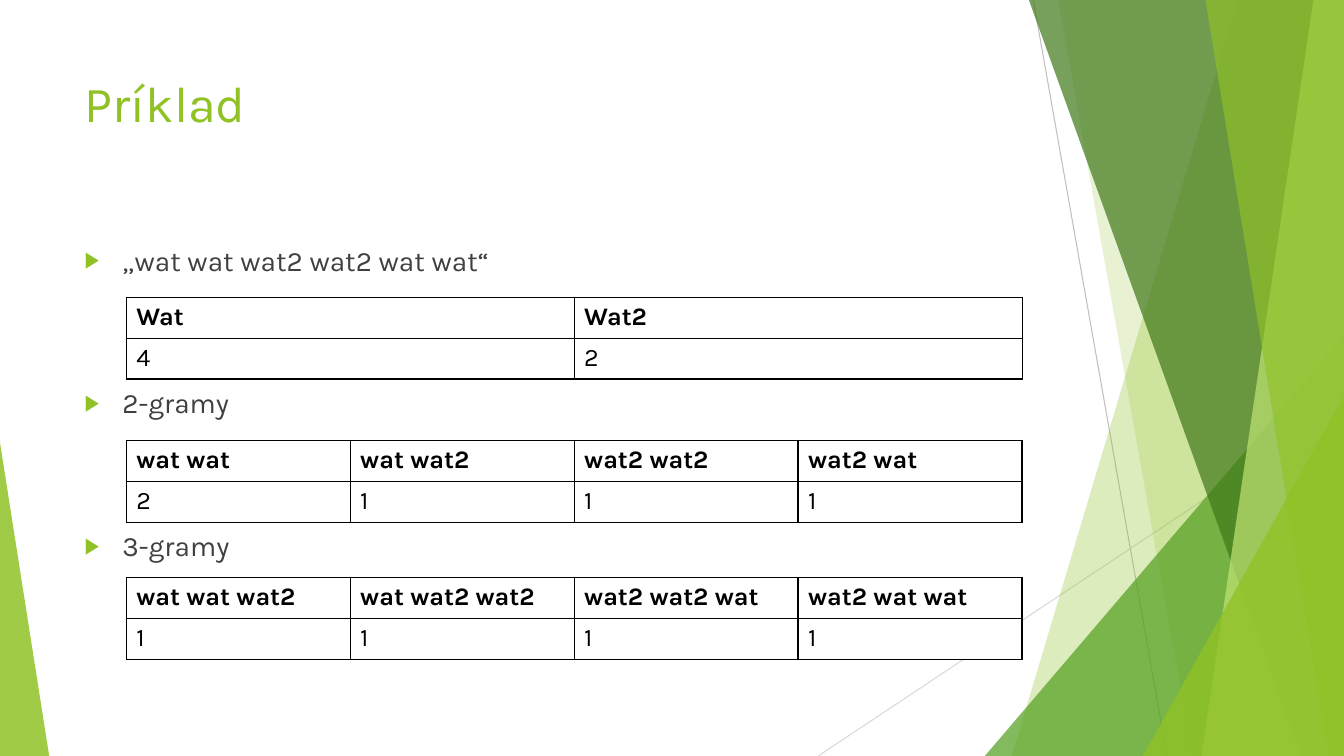
from lxml import etree
from pptx import Presentation
from pptx.dml.color import RGBColor
from pptx.enum.shapes import MSO_CONNECTOR, MSO_SHAPE
from pptx.enum.text import MSO_ANCHOR, MSO_AUTO_SIZE, PP_ALIGN
from pptx.oxml.ns import qn
from pptx.util import Cm, Pt

STRAIGHT = MSO_CONNECTOR.STRAIGHT
TRIANGLE = MSO_SHAPE.ISOSCELES_TRIANGLE
TOP = MSO_ANCHOR.TOP
NO_FIT = MSO_AUTO_SIZE.NONE
LEFT = PP_ALIGN.LEFT

GREEN = RGBColor(0x90, 0xC2, 0x26)
MID_GREEN = RGBColor(0x54, 0xA0, 0x21)
DARK_GREEN = RGBColor(0x3F, 0x78, 0x19)
PALE_GREEN = RGBColor(0xC0, 0xE4, 0x74)
GREY = RGBColor(0xBF, 0xBF, 0xBF)
LIGHT_GREY = RGBColor(0xD9, 0xD9, 0xD9)
TEXT_GREY = RGBColor(0x40, 0x40, 0x40)
BLACK = RGBColor(0, 0, 0)
WHITE = RGBColor(0xFF, 0xFF, 0xFF)

FONT = "Karla"
WIDTH, HEIGHT = 33.87, 19.05  # all lengths in cm

BULLETS = ["„wat wat wat2 wat2 wat wat“", "2-gramy", "3-gramy"]
COUNTS = [  # top of the table, n-grams, how often each occurs
    (7.49, ["Wat", "Wat2"], ["4", "2"]),
    (11.1, ["wat wat", "wat wat2", "wat2 wat2", "wat2 wat"], ["2", "1", "1", "1"]),
    (14.55, ["wat wat wat2", "wat wat2 wat2", "wat2 wat2 wat", "wat2 wat wat"],
     ["1", "1", "1", "1"]),
]


def add_xml(parent, tag, **attributes):
    return etree.SubElement(parent, qn(tag), attributes)


def set_font(paragraph, size, color, bold=False):
    font = paragraph.font
    font.name, font.size, font.bold = FONT, Pt(size), bold
    font.color.rgb = color


def tint(facet, color, opacity):
    facet.shadow.inherit = False
    facet.line.fill.background()
    facet.fill.solid()
    facet.fill.fore_color.rgb = color
    rgb = facet.fill._xPr.find(qn("a:solidFill"))[0]
    add_xml(rgb, "a:alpha", val=str(opacity * 1000))


def add_ray(slide, start, end, color):
    ray = slide.shapes.add_connector(STRAIGHT, *map(Cm, start + end))
    ray.line.color.rgb = color
    ray.line.width = Pt(0.75)
    add_xml(ray._element.spPr, "a:effectLst")


def add_panel(slide, box, top_x, bottom_x, color, opacity):
    """Slanted panel reaching to the right edge of the box."""
    left, top, width, height = box
    right, bottom = left + width, top + height
    outline = slide.shapes.build_freeform(Cm(left + top_x), Cm(top))
    corners = [(right, top), (right, bottom), (left + bottom_x, bottom)]
    outline.add_line_segments([(Cm(x), Cm(y)) for x, y in corners])
    tint(outline.convert_to_shape(), color, opacity)


def add_corner(slide, box, x, y, width, peak, color, opacity):
    """Right-angled triangle standing on the bottom of the box."""
    left, top, _, height = box
    corner = slide.shapes.add_shape(
        TRIANGLE, Cm(left + x), Cm(top + y), Cm(width), Cm(height - y))
    corner.adjustments[0] = peak
    tint(corner, color, opacity)


def add_facets(slide, box):
    left, top, width, height = box
    right, bottom = left + width, top + height
    add_ray(slide, (left + 26.04, top), (left + 29.41, bottom), GREY)
    add_ray(slide, (right, top + 10.24), (left + 20.62, bottom), LIGHT_GREY)
    add_panel(slide, box, 31.19, 25.5, GREEN, 30)
    add_panel(slide, box, 26.67, 30.05, GREEN, 20)
    add_corner(slide, box, 24.82, 8.46, 9.05, 1, MID_GREEN, 72)
    add_panel(slide, box, 25.93, 32.79, DARK_GREEN, 70)
    add_panel(slide, box, 33.1, 30.28, PALE_GREEN, 70)
    add_panel(slide, box, 30.38, 33.48, GREEN, 65)
    add_corner(slide, box, 28.8, 9.98, 5.07, 1, GREEN, 80)
    add_corner(slide, box, 0, 11.15, 1.24, 0, GREEN, 85)


def place(placeholder, box):
    placeholder.left, placeholder.top, placeholder.width, placeholder.height = map(Cm, box)
    frame = placeholder.text_frame
    frame.vertical_anchor = TOP
    frame.word_wrap = True
    frame.auto_size = NO_FIT
    return frame


def fill_title(slide, box):
    heading = place(slide.shapes.title, box).paragraphs[0]
    heading.text = "Príklad"
    heading.alignment = LEFT
    set_font(heading, 36, GREEN)


def fill_bullets(slide, box):
    frame = place(slide.placeholders[1], box)
    frame.text = "\n".join(BULLETS)
    for index, item in enumerate(frame.paragraphs):
        item.space_before = Pt(78 if index else 10)  # leaves room for a table
        properties = item._p.get_or_add_pPr()
        properties.set("marL", str(Cm(0.95)))
        properties.set("indent", str(-Cm(0.95)))
        color = add_xml(properties, "a:buClr")
        add_xml(color, "a:srgbClr", val=str(GREEN))
        add_xml(properties, "a:buSzPct", val="80000")
        add_xml(properties, "a:buChar", char="▶")
        set_font(item, 20, TEXT_GREY)


def fill_cell(cell, text, bold):
    properties = cell._tc.get_or_add_tcPr()
    for side in ("a:lnL", "a:lnR", "a:lnT", "a:lnB"):
        border = add_xml(properties, side, w=str(Pt(1)))
        add_xml(add_xml(border, "a:solidFill"), "a:srgbClr", val=str(BLACK))
    cell.fill.solid()
    cell.fill.fore_color.rgb = WHITE
    cell.text = text
    set_font(cell.text_frame.paragraphs[0], 18, BLACK, bold)


def add_counts(slide, box, ngrams, counts):
    table = slide.shapes.add_table(2, len(ngrams), *map(Cm, box)).table
    table.first_row = table.horz_banding = False
    for row, texts in enumerate((ngrams, counts)):
        for column, text in enumerate(texts):
            fill_cell(table.cell(row, column), text, bold=row == 0)


def main():
    deck = Presentation()
    deck.slide_width, deck.slide_height = Cm(WIDTH), Cm(HEIGHT)
    slide = deck.slides.add_slide(deck.slide_layouts[1])

    # Background decoration
    add_facets(slide, (0, 0, WIDTH, HEIGHT))
    # Title and list
    fill_title(slide, (1.88, 1.7, 23.88, 3.66))
    fill_bullets(slide, (1.88, 6, 23.88, 10.77))
    # Count tables
    for top, ngrams, counts in COUNTS:
        add_counts(slide, (3.18, top, 22.58, 2.06), ngrams, counts)

    deck.save("out.pptx")


if __name__ == "__main__":
    main()
